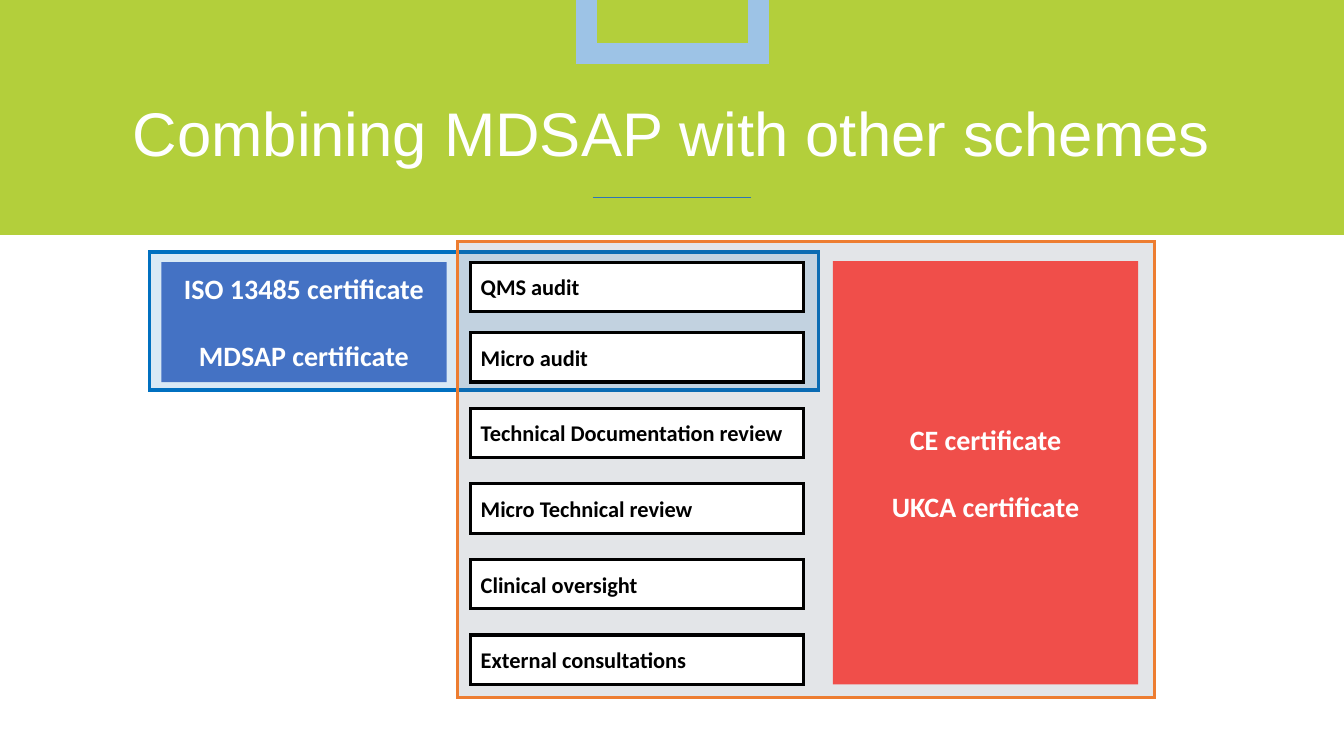
"""Build the slide on combining MDSAP with other certification schemes."""
from dataclasses import dataclass
from typing import Optional

from lxml.etree import SubElement
from pptx import Presentation
from pptx.dml.color import RGBColor
from pptx.enum.shapes import MSO_CONNECTOR, MSO_SHAPE
from pptx.enum.text import MSO_ANCHOR, PP_ALIGN
from pptx.oxml.ns import qn
from pptx.util import Pt

PX = 9144
WIDTH, HEIGHT = 1333, 750
COLORS = {
    "green": "B3CF3B", "tab": "9DC3E6", "rule": "2E75B6", "white": "FFFFFF",
    "black": "000000", "blue": "0070C0", "slate": "44546A", "orange": "ED7D31",
    "royal": "4472C4", "red": "F04E4A",
}


@dataclass(frozen=True)
class Box:
    left: int
    top: int
    width: int
    height: int
    fill: Optional[str] = None
    line: Optional[str] = None
    line_width: float = 2.25
    alpha: Optional[int] = None
    lines: tuple[str, ...] = ()
    size: int = 20
    color: str = "white"
    align: PP_ALIGN = PP_ALIGN.CENTER


def rgb(name: str) -> RGBColor:
    return RGBColor.from_string(COLORS[name])


def write_lines(tf, box: Box) -> None:
    tf.word_wrap = True
    tf.vertical_anchor = MSO_ANCHOR.MIDDLE
    for i, text in enumerate(box.lines):
        p = tf.add_paragraph() if i else tf.paragraphs[0]
        p.text = text
        p.alignment = box.align
        if i:
            p.space_before = Pt(24)
        p.font.name = "Calibri"
        p.font.size = Pt(box.size)
        p.font.bold = True
        p.font.color.rgb = rgb(box.color)


def draw_box(s, box: Box) -> None:
    sp = s.shapes.add_shape(MSO_SHAPE.RECTANGLE, box.left * PX, box.top * PX,
                            box.width * PX, box.height * PX)
    sp.shadow.inherit = False
    if box.fill:
        sp.fill.solid()
        sp.fill.fore_color.rgb = rgb(box.fill)
        if box.alpha is not None:
            clr = sp.fill._xPr.find(f".//{qn('a:srgbClr')}")
            SubElement(clr, qn("a:alpha"), val=str(box.alpha * 1000))
    else:
        sp.fill.background()
    if box.line:
        sp.line.color.rgb = rgb(box.line)
        sp.line.width = Pt(box.line_width)
        SubElement(sp.line._get_or_add_ln(), qn("a:miter"), lim="800000")
    else:
        sp.line.fill.background()
    if box.lines:
        write_lines(sp.text_frame, box)


def draw_rule(s, left: int, right: int, y: int) -> None:
    line = s.shapes.add_connector(MSO_CONNECTOR.STRAIGHT, left * PX, y * PX, right * PX, y * PX)
    line.line.color.rgb = rgb("rule")
    line.line.width = Pt(0.5)
    SubElement(line._element.spPr, qn("a:effectLst"))


def draw_title(s, text: str) -> None:
    tf = s.shapes.add_textbox(0, 98 * PX, WIDTH * PX, 127 * PX).text_frame
    tf.word_wrap = True
    p = tf.paragraphs[0]
    p.text = text
    p.alignment = PP_ALIGN.CENTER
    p.line_spacing = 0.9
    p.font.name = "Arial"
    p.font.size = Pt(44)
    p.font.color.rgb = rgb("white")


HEADER = (
    Box(0, 0, WIDTH, 233, "green"),
    Box(582, -21, 170, 74, line="tab", line_width=15),
)
SCOPES = (
    Box(148, 250, 664, 137, "blue", "blue", alpha=15),
    Box(454, 240, 691, 452, "slate", "orange", alpha=15),
)
CERTIFICATES = (
    Box(160, 260, 283, 119, "royal", lines=("ISO 13485 certificate", "MDSAP certificate")),
    Box(826, 259, 303, 420, "red", lines=("CE certificate", "UKCA certificate")),
)
SHARED_STEPS = ("QMS audit", "Micro audit")
PRODUCT_STEPS = ("Technical Documentation review", "Micro Technical review",
                 "Clinical oversight", "External consultations")


def step_boxes(steps: tuple[str, ...], top: int, pitch: int) -> tuple[Box, ...]:
    return tuple(Box(467, top + i * pitch, 330, 49, "white", "black", lines=(step,),
                     size=16, color="black", align=PP_ALIGN.LEFT)
                 for i, step in enumerate(steps))


def main() -> None:
    prs = Presentation()
    prs.slide_width, prs.slide_height = WIDTH * PX, HEIGHT * PX
    s = prs.slides.add_slide(prs.slide_layouts[6])
    for box in HEADER:
        draw_box(s, box)
    draw_rule(s, 588, 745, 196)
    draw_title(s, "Combining MDSAP with other schemes")
    steps = step_boxes(SHARED_STEPS, 260, 70) + step_boxes(PRODUCT_STEPS, 405, 75)
    for box in SCOPES + steps + CERTIFICATES:
        draw_box(s, box)
    prs.save("out.pptx")


if __name__ == "__main__":
    main()
